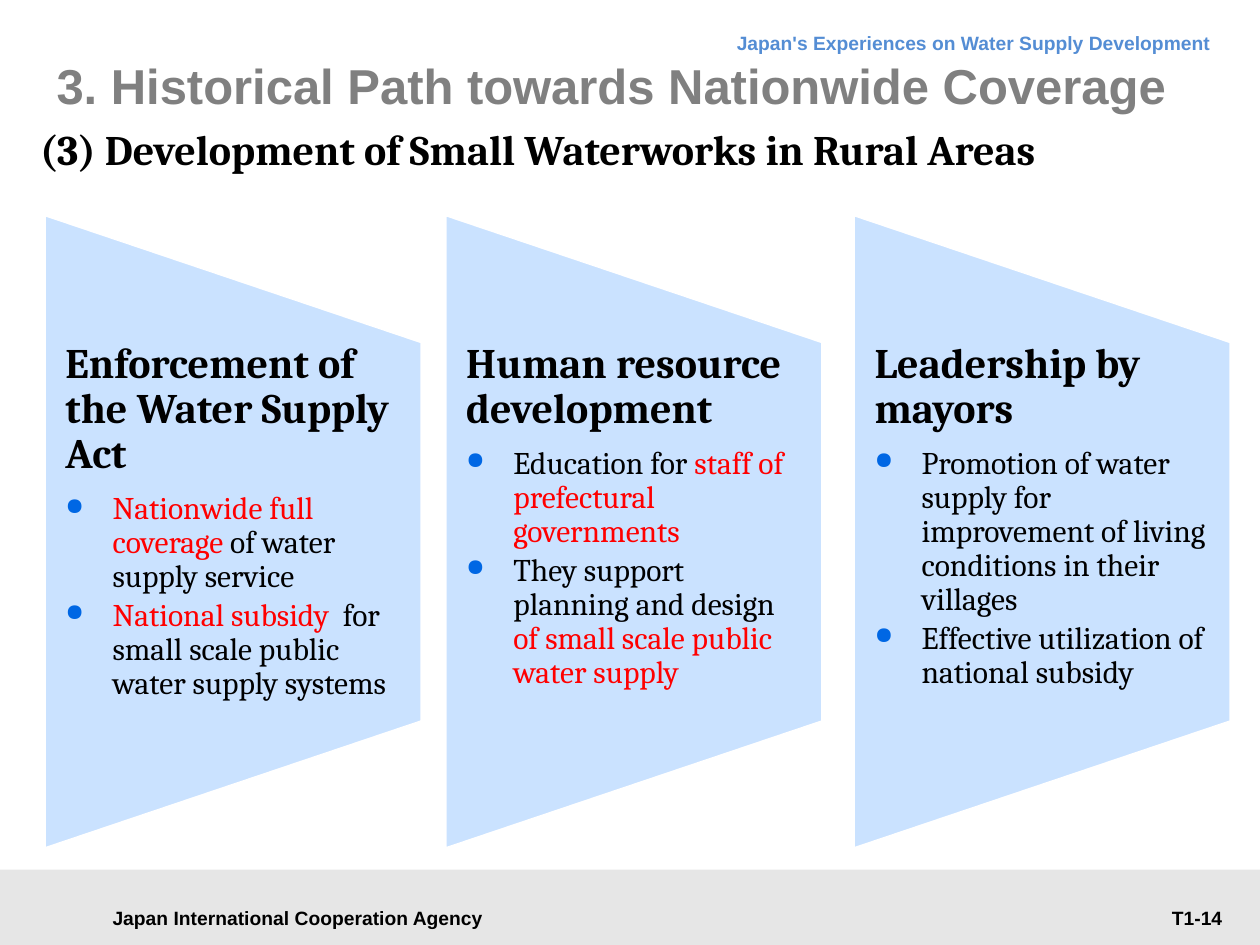
from lxml.etree import SubElement
from pptx import Presentation
from pptx.dml.color import RGBColor
from pptx.enum.shapes import MSO_SHAPE
from pptx.enum.text import MSO_ANCHOR as ANCHOR, PP_ALIGN as ALIGN
from pptx.oxml.ns import qn
from pptx.util import Cm, Pt

BLACK, RED, GREY, BLUE = "000000", "FF0000", "808080", "548DD4"
PANEL, BULLET, FOOTER, WHITE = "CAE2FF", "0067E4", "E6E6E6", "FFFFFF"
SMALL = dict(name="Arial", size=Pt(11), bold=True)
TITLE = dict(name="Arial", size=Pt(28), bold=True)
HEADING = dict(name="Cambria", size=Pt(24), bold=True)
BODY = dict(name="Cambria", size=Pt(18), bold=False)


def rgb(value):
    return RGBColor.from_string(value)


def set_all(target, values):
    for name, value in values.items():
        setattr(target, name, value)


class Deck:
    def __init__(self, width, height):
        self.prs = Presentation()
        self.prs.slide_width, self.prs.slide_height = Cm(width), Cm(height)
        self.s = self.prs.slides.add_slide(self.prs.slide_layouts[6])

    def paint(self, sp, fill, line=None):
        sp.shadow.inherit = False
        sp.fill.solid()
        sp.fill.fore_color.rgb = rgb(fill)
        if line:
            sp.line.color.rgb = rgb(line)
            sp.line.width = Pt(2)
        else:
            sp.line.fill.background()

    def frame(self, tf, margins, anchor=ANCHOR.TOP):
        left, top, right, bottom = map(Cm, margins)
        set_all(tf, dict(margin_left=left, margin_top=top, margin_right=right,
                         margin_bottom=bottom, word_wrap=True,
                         vertical_anchor=anchor))

    def add_runs(self, p, runs, font, **layout):
        """Fill a paragraph from (text, colour) pairs."""
        set_all(p, dict(alignment=ALIGN.LEFT) | layout)
        for text, color in runs:
            r = p.add_run()
            r.text = text
            set_all(r.font, font)
            r.font.color.rgb = rgb(color)

    def bullet(self, p):
        pPr = p._p.get_or_add_pPr()
        pPr.set("marL", str(Cm(0.95)))
        pPr.set("indent", str(-Cm(0.95)))
        color = SubElement(pPr, qn("a:buClr"))
        SubElement(color, qn("a:srgbClr"), val=BULLET)
        SubElement(pPr, qn("a:buSzPct"), val="75000")
        SubElement(pPr, qn("a:buChar"), char="●")

    def band(self, x, y, w, h, fill):
        sp = self.s.shapes.add_shape(MSO_SHAPE.RECTANGLE, *map(Cm, (x, y, w, h)))
        self.paint(sp, fill)

    def text(self, x, y, w, h, text, color, font, anchor=ANCHOR.TOP,
             margins=(0.25, 0.13, 0.25, 0.13), **layout):
        tf = self.s.shapes.add_textbox(*map(Cm, (x, y, w, h))).text_frame
        self.frame(tf, margins, anchor)
        self.add_runs(tf.paragraphs[0], [(text, color)], font, **layout)

    def panel(self, x, y, w, h, cut, heading, points):
        """Draw a panel whose right side is shorter by cut at both ends."""
        corners = [(x, y), (x + w, y + cut), (x + w, y + h - cut)]
        builder = self.s.shapes.build_freeform(Cm(x), Cm(y + h))
        builder.add_line_segments([(Cm(a), Cm(b)) for a, b in corners])
        sp = builder.convert_to_shape()
        self.paint(sp, PANEL, WHITE)
        tf = sp.text_frame
        self.frame(tf, (0.43, cut, 0.43, cut))
        self.add_runs(tf.paragraphs[0], [(heading, BLACK)], HEADING,
                      line_spacing=0.9, space_after=Pt(8.4))
        for runs in points:
            p = tf.add_paragraph()
            self.bullet(p)
            self.add_runs(p, runs, BODY, level=1, line_spacing=0.9,
                          space_after=Pt(2.7))


PANELS = [
    (0.89, "Enforcement of the Water Supply Act", [
        [("Nationwide full coverage ", RED), ("of water supply service", BLACK)],
        [("National subsidy  ", RED),
         ("for small scale public water supply systems", BLACK)]]),
    (8.97, "Human resource development", [
        [("Education for ", BLACK), ("staff of prefectural governments", RED)],
        [("They support planning and design ", BLACK),
         ("of small scale public water supply", RED)]]),
    (17.2, "Leadership by mayors", [
        [("Promotion of water supply for improvement of living conditions "
          "in their villages", BLACK)],
        [("Effective utilization of national subsidy", BLACK)]]),
]


def main():
    deck = Deck(25.4, 19.05)
    deck.band(0, 17.53, 25.4, 1.52, FOOTER)
    deck.text(1.8, 18.08, 8.41, 0.86, "Japan International Cooperation Agency",
              BLACK, SMALL, ANCHOR.MIDDLE, alignment=ALIGN.CENTER)
    deck.text(6.91, 0.33, 17.75, 0.97,
              "Japan's Experiences on Water Supply Development",
              BLUE, SMALL, alignment=ALIGN.RIGHT, line_spacing=Pt(18))
    deck.text(20.9, 18.14, 3.99, 0.74, "T1-14", BLACK, SMALL,
              alignment=ALIGN.RIGHT)
    for x, heading, points in PANELS:
        deck.panel(x, 4.32, 7.62, 12.8, 2.57, heading, points)
    deck.text(0.99, 0.71, 22.81, 2.01,
              "3. Historical Path towards Nationwide Coverage",
              GREY, TITLE, ANCHOR.MIDDLE, margins=(0.15, 0, 0, 0))
    deck.text(0.71, 2.49, 24, 1.02,
              "(3) Development of Small Waterworks in Rural Areas",
              BLACK, HEADING, margins=(0.1, 0, 0, 0))
    deck.prs.save("out.pptx")


if __name__ == "__main__":
    main()
